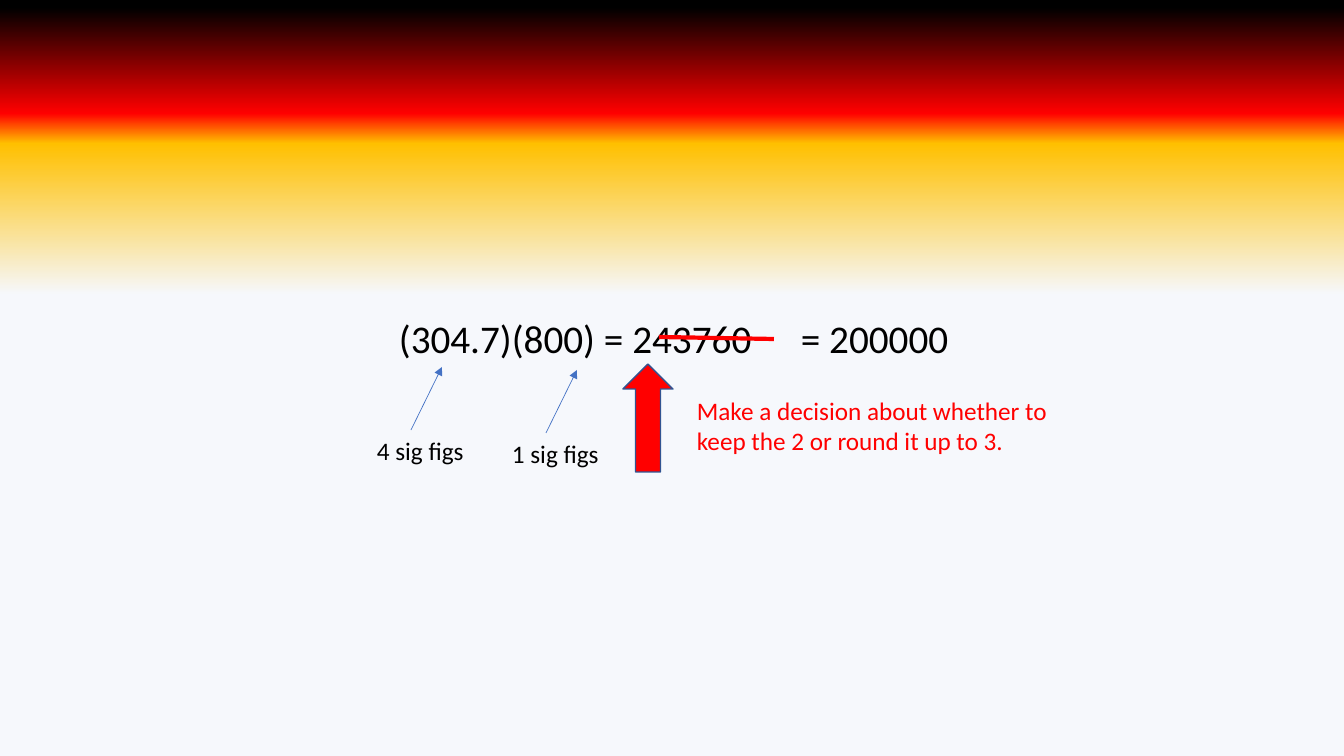
from copy import deepcopy

from pptx import Presentation
from pptx.dml.color import RGBColor
from pptx.enum.shapes import MSO_CONNECTOR, MSO_SHAPE
from pptx.enum.text import MSO_AUTO_SIZE
from pptx.oxml.ns import qn
from pptx.oxml.xmlchemy import OxmlElement
from pptx.util import Emu, Pt

BLACK = RGBColor(0x00, 0x00, 0x00)
RED = RGBColor(0xFF, 0x00, 0x00)
GOLD = RGBColor(0xFF, 0xC0, 0x00)
PALE = RGBColor(0xF6, 0xF8, 0xFC)
BLUE = RGBColor(0x44, 0x72, 0xC4)
DARK_BLUE = RGBColor(0x32, 0x54, 0x91)

EMU_PER_PX = 914400 / 100.8


def px(length):
    return Emu(round(length * EMU_PER_PX))


def write_text(text_frame, text, *, size, color, font="Calibri"):
    text_frame.word_wrap = True
    text_frame.auto_size = MSO_AUTO_SIZE.SHAPE_TO_FIT_TEXT
    run = text_frame.paragraphs[0].add_run()
    run.text = text
    run.font.name = font
    run.font.size = Pt(size)
    run.font.color.rgb = color


class SlideBuilder:
    """Draws on one slide, with lengths in px."""

    def __init__(self, slide):
        self.slide = slide

    def background(self, stops):
        """Fill from bottom to top with (position, color) stops."""
        fill = self.slide.background.fill
        fill.gradient()
        fill.gradient_angle = 90
        stop_list = next(self.slide.element.iter(qn("a:gsLst")))
        while len(stop_list) < len(stops):
            stop_list.append(deepcopy(stop_list[0]))
        for stop, (position, color) in zip(fill.gradient_stops, stops):
            stop.position = position
            stop.color.rgb = color

    def text(self, left, top, width, height, text, size=18, color=BLACK):
        box = self.slide.shapes.add_textbox(px(left), px(top), px(width), px(height))
        write_text(box.text_frame, text, size=size, color=color)

    def line(self, start, end, color, width, arrow=False):
        connector = self.slide.shapes.add_connector(
            MSO_CONNECTOR.STRAIGHT, *map(px, (*start, *end)))
        connector.line.color.rgb = color
        connector.line.width = Pt(width)
        if arrow:
            tail = OxmlElement("a:tailEnd")
            tail.set("type", "triangle")
            connector.line._get_or_add_ln().append(tail)
        connector._element.spPr.append(OxmlElement("a:effectLst"))

    def up_arrow(self, left, top, width, height):
        shape = self.slide.shapes.add_shape(
            MSO_SHAPE.UP_ARROW, px(left), px(top), px(width), px(height))
        shape.shadow.inherit = False
        shape.fill.solid()
        shape.fill.fore_color.rgb = RED
        shape.line.color.rgb = DARK_BLUE
        shape.line.width = Pt(1)

    def factor_note(self, left, top, text):
        """Label with a thin arrow up to the factor it describes."""
        self.text(left, top, 154, 40, text)
        self.line((left + 44, top), (left + 75, top - 63), BLUE, 0.5, arrow=True)


def main():
    presentation = Presentation()
    presentation.slide_width = px(1344)
    presentation.slide_height = px(756)
    slide = presentation.slides.add_slide(presentation.slide_layouts[6])
    builder = SlideBuilder(slide)

    builder.background([(0.61, PALE), (0.81, GOLD), (0.85, RED), (0.99, BLACK)])
    builder.text(389, 309, 728, 57, "(304.7)(800) = 243760", size=28)
    builder.factor_note(367, 430, "4 sig figs")
    builder.factor_note(502, 433, "1 sig figs")
    builder.up_arrow(623, 364, 50, 108)
    builder.text(687, 390, 404, 72,
                 "Make a decision about whether to keep the 2 or round it up to 3.",
                 color=RED)
    builder.line((659, 337), (774, 339), RED, 3)
    builder.text(791, 309, 180, 57, "= 200000", size=28)

    presentation.save("out.pptx")


if __name__ == "__main__":
    main()
